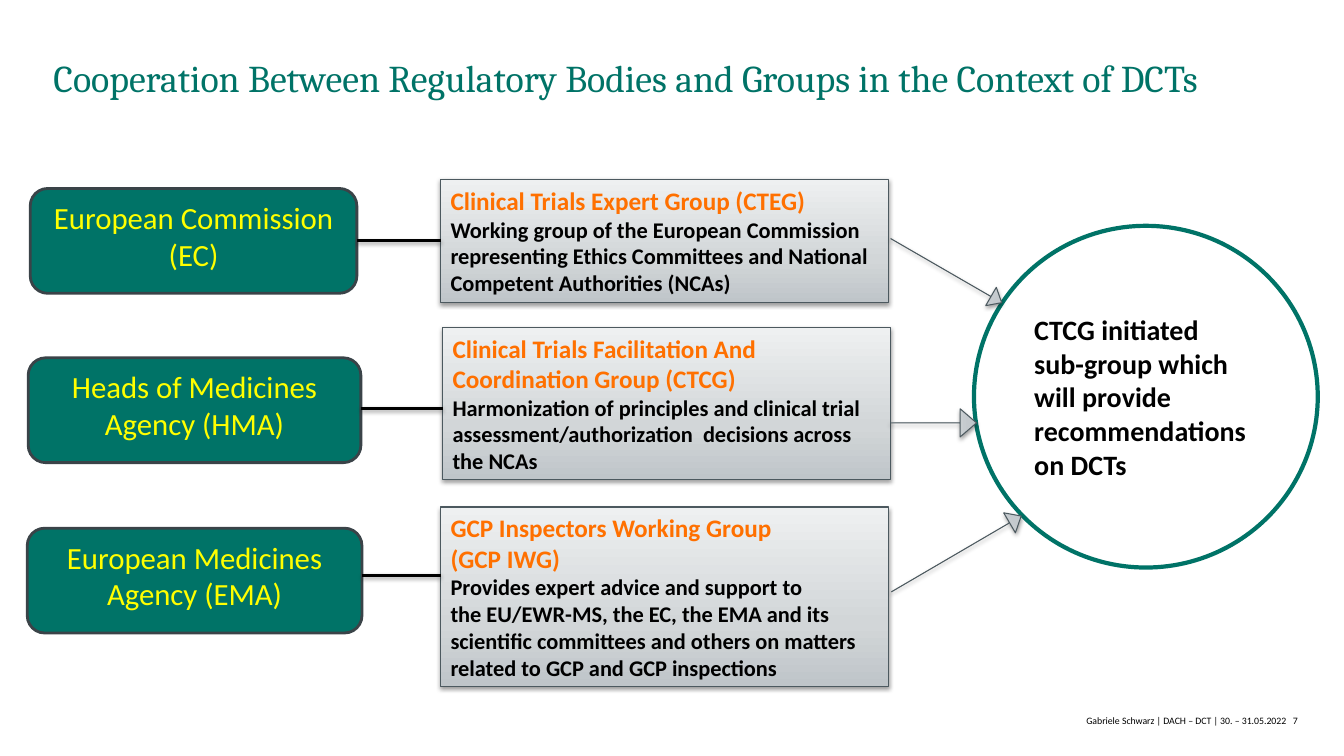
from dataclasses import dataclass
from typing import Optional

from lxml import etree
from pptx import Presentation
from pptx.dml.color import RGBColor
from pptx.enum.shapes import MSO_CONNECTOR, MSO_SHAPE as Preset
from pptx.enum.text import MSO_ANCHOR as Anchor, MSO_AUTO_SIZE, PP_ALIGN as Align
from pptx.oxml import parse_xml
from pptx.oxml.ns import nsdecls, qn
from pptx.util import Pt

PX = 9144  # 100 px to the inch


@dataclass(frozen=True)
class Theme:
    green: str = "007367"
    yellow: str = "FFFF00"
    orange: str = "FF7000"
    black: str = "000000"
    white: str = "FFFFFF"
    body_edge: str = "3A4348"
    panel_edge: str = "4C595F"
    panel_stops: tuple = ((0, "BFC5C9"), (35, "D2D6D8"), (100, "EEF0F1"))
    title_font: str = "Cambria"
    text_font: str = "Calibri"
    title: int = 27
    body: int = 22
    circle: int = 20
    heading: int = 18
    detail: int = 16
    footer: int = 7


THEME = Theme()


@dataclass(frozen=True)
class Box:
    left: int
    top: int
    width: int
    height: int

    @property
    def right(self) -> int:
        return self.left + self.width

    def emu(self) -> tuple:
        return tuple(n * PX for n in (self.left, self.top, self.width, self.height))


@dataclass(frozen=True)
class Span:
    text: str
    size: int
    color: str
    break_after: bool = False


def heading(text: str, break_after: bool = False) -> Span:
    return Span(text, THEME.heading, THEME.orange, break_after)


def detail(text: str) -> Span:
    return Span(text, THEME.detail, THEME.black)


@dataclass(frozen=True)
class Row:
    """A regulatory body, its working group, and the line between them."""
    body: str
    body_box: Box
    group: tuple
    group_box: Box
    line_y: Optional[int] = None  # None: joined at the middle of both sides


@dataclass(frozen=True)
class Arrow:
    box: Box
    rotation: float


ROWS = (
    Row("European Commission (EC)", Box(30, 187, 324, 104),
        ((heading("Clinical Trials Expert Group (CTEG)"),),
         (detail("Working group of the European Commission representing Ethics "
                 "Committees and National Competent Authorities (NCAs)"),)),
        Box(437, 178, 444, 122)),
    Row("Heads of Medicines Agency (HMA)", Box(28, 355, 330, 104),
        ((heading("Clinical Trials Facilitation And Coordination Group (CTCG)", True),
          detail("Harmonization of principles and clinical trial "
                 "assessment/authorization  decisions across the NCAs")),),
        Box(439, 325, 444, 151), 405),
    Row("European Medicines Agency (EMA)", Box(27, 524, 332, 104),
        ((heading("GCP Inspectors Working Group"),),
         (heading("(GCP IWG)", True), detail("Provides expert advice and support to")),
         (detail("the EU/EWR-MS, the EC, the EMA and its scientific committees and "
                 "others on matters related to GCP and GCP inspections"),)),
        Box(437, 503, 444, 178), 571),
)
ARROWS = (
    Arrow(Box(937, 475, 23, 149), 239.7),
    Arrow(Box(928, 205, 21, 127), 300),
    Arrow(Box(912, 377, 28, 85), 270),
)
CIRCLE = Box(966, 224, 341, 339)
CIRCLE_TEXT = ("CTCG initiated", "sub-group which will provide recommendations on DCTs")


def write(frame, paragraphs, *, font: str = THEME.text_font, bold: bool = False,
          align=Align.LEFT, anchor=Anchor.TOP, leading: Optional[int] = None) -> None:
    frame.word_wrap = True
    frame.vertical_anchor = anchor
    for index, spans in enumerate(paragraphs):
        para = frame.add_paragraph() if index else frame.paragraphs[0]
        para.alignment = align
        if leading:
            para.line_spacing = Pt(leading)
        for span in spans:
            run = para.add_run()
            run.text = span.text
            run.font.name, run.font.size, run.font.bold = font, Pt(span.size), bold
            run.font.color.rgb = RGBColor.from_string(span.color)
            if span.break_after:
                para.add_line_break()


def set_effects(item, shadow: bool) -> None:
    """Add the effect list; call once fill and line are set."""
    properties = item.element.find(qn("p:spPr"))
    effects = etree.SubElement(properties, qn("a:effectLst"))
    if shadow:
        effects.append(parse_xml(
            f'<a:outerShdw {nsdecls("a")} blurRad="40000" dist="20000" dir="5400000" '
            f'rotWithShape="0"><a:srgbClr val="{THEME.black}"><a:alpha val="38000"/>'
            '</a:srgbClr></a:outerShdw>'))


def set_line(item, color: str, width: float) -> None:
    item.line.color.rgb = RGBColor.from_string(color)
    item.line.width = Pt(width)


def add_solid(page, preset, box: Box, fill: str, edge: str, width: float):
    shape = page.shapes.add_shape(preset, *box.emu())
    shape.fill.solid()
    shape.fill.fore_color.rgb = RGBColor.from_string(fill)
    set_line(shape, edge, width)
    set_effects(shape, shadow=False)
    return shape


def add_panel(page, preset, box: Box):
    """Add a shape with the grey gradient and a soft shadow."""
    shape = page.shapes.add_shape(preset, *box.emu())
    stops = "".join(f'<a:gs pos="{place * 1000}"><a:srgbClr val="{color}"/></a:gs>'
                    for place, color in THEME.panel_stops)
    shape.element.spPr.append(parse_xml(
        f'<a:gradFill {nsdecls("a")} rotWithShape="1"><a:gsLst>{stops}</a:gsLst>'
        '<a:lin ang="16200000" scaled="0"/></a:gradFill>'))
    set_line(shape, THEME.panel_edge, 0.75)
    set_effects(shape, shadow=True)
    return shape


def add_row(page, row: Row) -> None:
    group = add_panel(page, Preset.RECTANGLE, row.group_box)
    write(group.text_frame, row.group, bold=True, anchor=Anchor.MIDDLE)
    body = add_solid(page, Preset.FLOWCHART_ALTERNATE_PROCESS, row.body_box,
                     THEME.green, THEME.body_edge, 2)
    write(body.text_frame, [[Span(row.body, THEME.body, THEME.yellow)]], align=Align.CENTER)
    y = (row.line_y or 0) * PX
    line = page.shapes.add_connector(MSO_CONNECTOR.STRAIGHT, row.body_box.right * PX, y,
                                     row.group_box.left * PX, y)
    if row.line_y is None:
        line.begin_connect(body, 3)
        line.end_connect(group, 1)
    set_line(line, THEME.black, 2)
    set_effects(line, shadow=True)


def main() -> None:
    deck = Presentation()
    deck.slide_width, deck.slide_height = 1333 * PX, 750 * PX
    page = deck.slides.add_slide(deck.slide_layouts[5])

    # Title
    title = page.shapes.title
    title.left, title.top, title.width, title.height = Box(53, 51, 1220, 92).emu()
    frame = title.text_frame
    frame.auto_size = MSO_AUTO_SIZE.NONE
    frame.margin_left = frame.margin_top = frame.margin_right = frame.margin_bottom = 0
    write(frame, [[Span("Cooperation Between Regulatory Bodies and Groups in the Context of DCTs",
                        THEME.title, THEME.green)]], font=THEME.title_font, leading=35)

    # Bodies and their groups
    for row in ROWS:
        add_row(page, row)

    # Sub-group circle and the arrows into it
    circle = add_solid(page, Preset.OVAL, CIRCLE, THEME.white, THEME.green, 3)
    write(circle.text_frame, [[Span(text, THEME.circle, THEME.black)] for text in CIRCLE_TEXT],
          bold=True, anchor=Anchor.MIDDLE)
    for arrow in ARROWS:
        shape = add_panel(page, Preset.DOWN_ARROW, arrow.box)
        shape.adjustments[0], shape.adjustments[1] = 0, 0.58
        shape.rotation = arrow.rotation

    # Footer
    footer = page.shapes.add_textbox(*Box(177, 704, 1120, 40).emu())
    write(footer.text_frame, [[Span("Gabriele Schwarz | DACH – DCT | 30. – 31.05.2022   7",
                                    THEME.footer, THEME.black)]], align=Align.RIGHT)
    deck.save("out.pptx")


if __name__ == "__main__":
    main()
